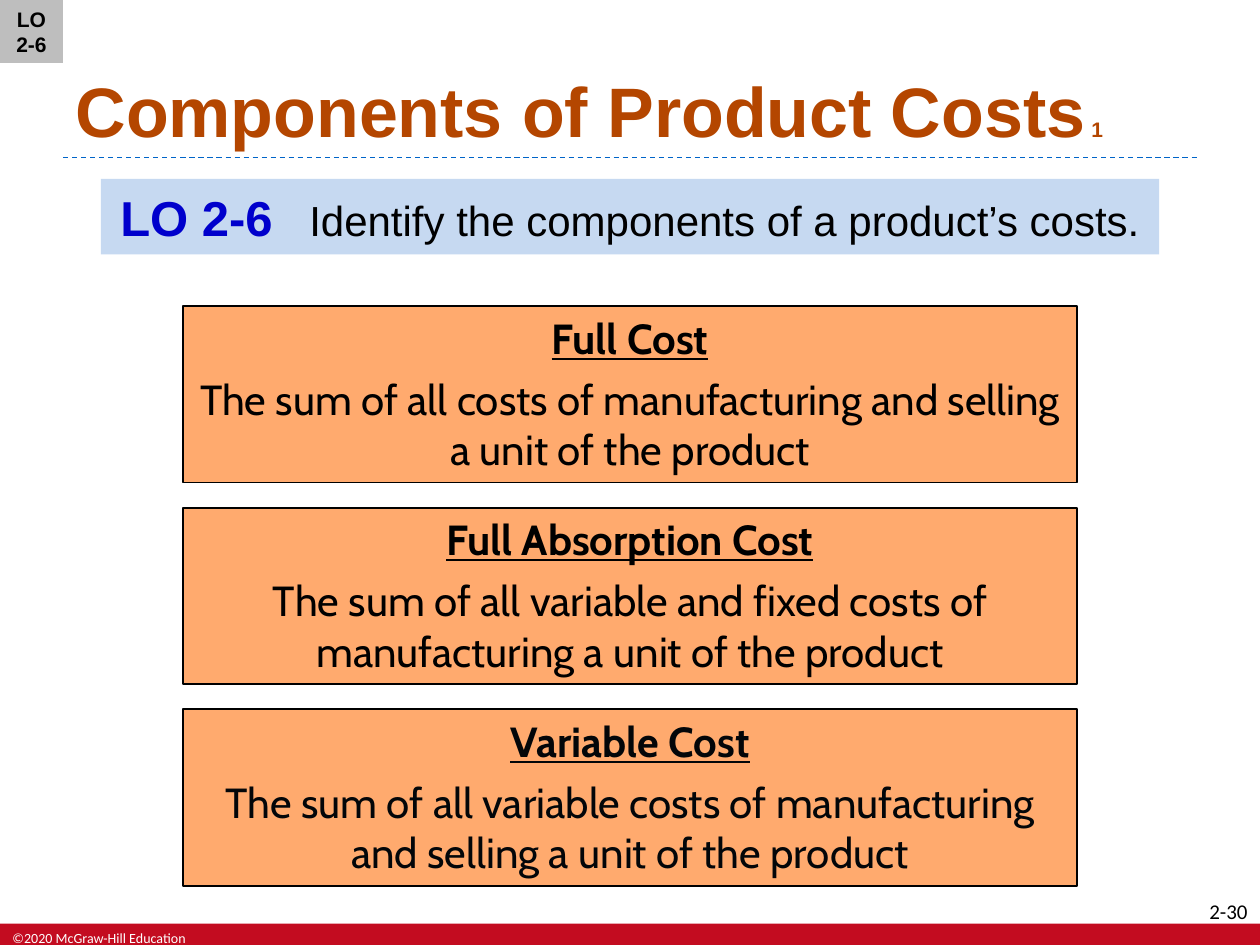
from lxml import etree
from pptx import Presentation
from pptx.dml.color import RGBColor
from pptx.enum.dml import MSO_LINE
from pptx.enum.shapes import MSO_CONNECTOR, MSO_SHAPE
from pptx.enum.text import MSO_ANCHOR as Anchor, MSO_AUTO_SIZE, PP_ALIGN as Align
from pptx.oxml.ns import qn
from pptx.util import Inches, Pt

COLORS = {
    "title": "B44600", "rule": "0064C8", "footer": "C30C20", "tag": "BEBEBE",
    "banner": "C6D9F1", "objective": "0000CC", "card": "FFAA6E",
    "variable": "030609", "black": "000000", "white": "FFFFFF",
}

COSTS = [
    ("Full Cost", "The sum of all costs of manufacturing and selling a unit of the product", "black"),
    ("Full Absorption Cost",
     "The sum of all variable and fixed costs of manufacturing a unit of the product", "black"),
    ("Variable Cost",
     "The sum of all variable costs of manufacturing and selling a unit of the product", "variable"),
]


def rgb(key):
    return RGBColor.from_string(COLORS[key])


def place(box):
    return [Inches(value) for value in box]


def add_run(paragraph, text, size, color="black", name="Arial", **format_values):
    run = paragraph.add_run()
    run.text = text
    run.font.color.rgb = rgb(color)
    for attribute, value in {"size": Pt(size), "name": name, **format_values}.items():
        setattr(run.font, attribute, value)


def format_paragraph(paragraph, **format_values):
    for attribute, value in format_values.items():
        setattr(paragraph, attribute, value)


def add_panel(slide, box, fill, outline=None, anchor=Anchor.TOP):
    panel = slide.shapes.add_shape(MSO_SHAPE.RECTANGLE, *place(box))
    panel.shadow.inherit = False
    panel.fill.solid()
    panel.fill.fore_color.rgb = rgb(fill)
    if outline:
        panel.line.color.rgb = rgb(outline)
        panel.line.width = Pt(1)
    else:
        panel.line.fill.background()
    panel.text_frame.word_wrap = True
    panel.text_frame.vertical_anchor = anchor
    return panel.text_frame


def add_label(slide, box, text, size, color, align):
    frame = slide.shapes.add_textbox(*place(box)).text_frame
    frame.word_wrap = True
    frame.paragraphs[0].alignment = align
    add_run(frame.paragraphs[0], text, size, color, "Calibri")


def add_footer(slide, box):
    left, top, width, height = box
    add_panel(slide, box, "footer")
    add_label(slide, (left, top, 1.6, height), "©2020 McGraw-Hill Education", 8, "white", Align.LEFT)
    add_label(slide, (left + width - 0.54, top - 0.25, 0.54, 0.2), "2-30", 12, "black", Align.RIGHT)


def add_title(slide, box):
    left, top, width, height = box
    rule_y = top + height
    rule = slide.shapes.add_connector(
        MSO_CONNECTOR.STRAIGHT, *place((left, rule_y, left + width, rule_y)))
    rule.line.color.rgb = rgb("rule")
    rule.line.width = Pt(0.75)
    rule.line.dash_style = MSO_LINE.DASH
    etree.SubElement(rule._element.spPr, qn("a:effectLst"))

    title = slide.shapes.title
    title.left, title.top, title.width, title.height = place(box)
    frame = title.text_frame
    frame.auto_size = MSO_AUTO_SIZE.NONE
    frame.vertical_anchor = Anchor.BOTTOM
    heading = frame.paragraphs[0]
    heading.alignment = Align.LEFT
    add_run(heading, "Components of Product Costs", 40, "title", bold=True)
    add_run(heading, " 1", 12, "title", bold=True)


def add_objective(slide, box):
    objective = add_panel(slide, box, "banner", anchor=Anchor.MIDDLE).paragraphs[0]
    tabs = etree.SubElement(objective._p.get_or_add_pPr(), qn("a:tabLst"))
    etree.SubElement(tabs, qn("a:tab"), pos=str(Inches(1.5)), algn="l")
    objective.alignment = Align.CENTER
    add_run(objective, "LO 2-6\t", 28, "objective", bold=True)
    add_run(objective, "Identify the components of a product’s costs.", 24, bold=False)


def add_cost_cards(slide, box, gap=0.2):
    left, top, width, height = box
    card_height = (height - gap * (len(COSTS) - 1)) / len(COSTS)
    for index, (term, definition, color) in enumerate(COSTS):
        card_top = top + index * (card_height + gap)
        frame = add_panel(slide, (left, card_top, width, card_height), "card", "black")
        term_line, definition_line = frame.paragraphs[0], frame.add_paragraph()
        for line in (term_line, definition_line):
            format_paragraph(line, alignment=Align.CENTER, space_after=Pt(6))
        add_run(term_line, term, 24, color, "Cabin", bold=True, underline=True)
        add_run(definition_line, definition, 24, color, "Cabin", bold=False)


def add_corner_tag(slide, box):
    tag = add_panel(slide, box, "tag", anchor=Anchor.MIDDLE).paragraphs[0]
    tag.alignment = Align.CENTER
    add_run(tag, "LO 2-6", 12, bold=True)


def main():
    deck = Presentation()
    deck.slide_width, deck.slide_height = Inches(10), Inches(7.5)
    slide = deck.slides.add_slide(deck.slide_layouts[5])  # title only
    add_footer(slide, (0, 7.33, 10, 0.17))
    add_title(slide, (0.5, 0.05, 9, 1.2))
    add_objective(slide, (0.8, 1.42, 8.4, 0.6))
    add_cost_cards(slide, (1.45, 2.43, 7.1, 4.6))
    add_corner_tag(slide, (0, 0, 0.5, 0.5))
    deck.save("out.pptx")


if __name__ == "__main__":
    main()
